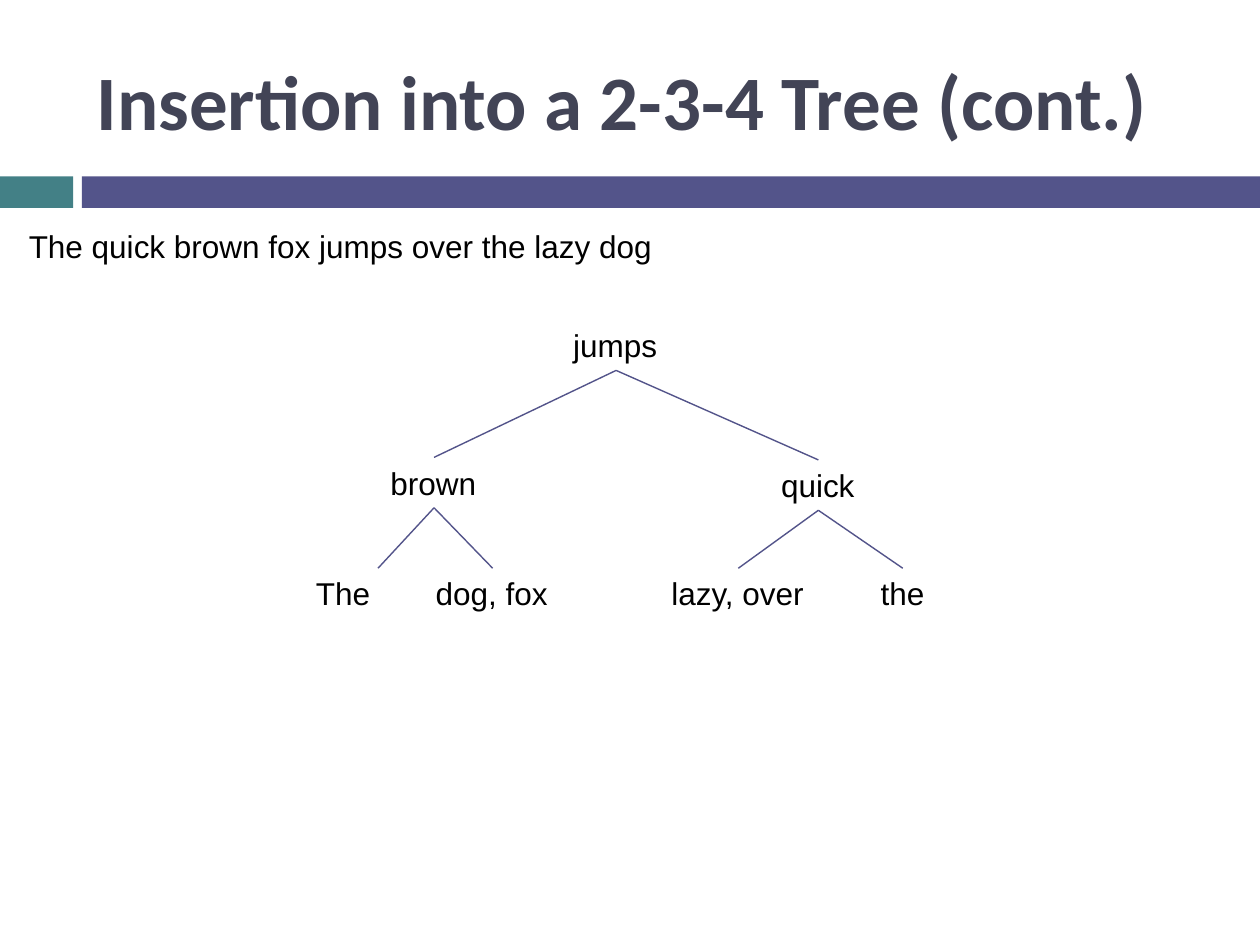
"""Build a slide showing a 2-3-4 tree after inserting the words of a sentence."""
from typing import NamedTuple, Optional

from lxml.etree import SubElement
from pptx import Presentation
from pptx.dml.color import RGBColor as Color
from pptx.enum.shapes import MSO_CONNECTOR as Connector, MSO_SHAPE as Preset
from pptx.enum.text import MSO_ANCHOR as Anchor, MSO_AUTO_SIZE as AutoSize
from pptx.oxml.ns import qn
from pptx.shapes.autoshape import Shape
from pptx.slide import Slide
from pptx.util import Inches, Pt


class Theme(NamedTuple):
    teal: Color = Color.from_string("438086")
    indigo: Color = Color.from_string("53548A")
    heading: Color = Color.from_string("424456")
    ink: Color = Color.from_string("000000")
    title_font: str = "Calibri"
    body_font: str = "Arial"
    title_size: float = 44
    body_size: float = 18
    edge_width: float = 0.79


class Band(NamedTuple):
    left: float
    width: float
    color: Color


class Node(NamedTuple):
    text: str
    left: float
    top: float
    width: float
    parent: Optional[str] = None
    edge_end: Optional[float] = None


THEME = Theme()
TOP, BOTTOM = 0, 2
LABEL_HEIGHT = 0.4
LEAF_TOP = 4.51
BANDS = [Band(0, 0.58, THEME.teal), Band(0.65, 9.35, THEME.indigo)]
SENTENCE = Node("The quick brown fox jumps over the lazy dog", 0.13, 1.75, 5.19)
TREE = [
    Node("jumps", 4.45, 2.54, 0.88),
    Node("brown", 3, 3.63, 0.89, "jumps"),
    Node("quick", 6.1, 3.65, 0.79, "jumps"),
    Node("The", 2.41, LEAF_TOP, 0.64, "brown", edge_end=3),
    Node("dog, fox", 3.36, LEAF_TOP, 1.1, "brown"),
    Node("lazy, over", 5.23, LEAF_TOP, 1.26, "quick"),
    Node("the", 6.89, LEAF_TOP, 0.55, "quick"),
]


def draw_band(page: Slide, band: Band) -> None:
    bar = page.shapes.add_shape(
        Preset.RECTANGLE, Inches(band.left), Inches(1.4), Inches(band.width), Inches(0.25)
    )
    bar.shadow.inherit = False
    bar.fill.solid()
    bar.fill.fore_color.rgb = band.color
    bar.line.fill.background()


def draw_title(page: Slide, text: str) -> None:
    box = page.shapes.add_textbox(Inches(0.67), Inches(0.25), Inches(8.92), Inches(1.08))
    frame = box.text_frame
    frame.text = text
    frame.word_wrap = True
    frame.vertical_anchor = Anchor.MIDDLE
    font = frame.paragraphs[0].runs[0].font
    font.name, font.size, font.bold = THEME.title_font, Pt(THEME.title_size), True
    font.color.rgb = THEME.heading


def draw_label(page: Slide, node: Node) -> Shape:
    box = page.shapes.add_textbox(
        Inches(node.left), Inches(node.top), Inches(node.width), Inches(LABEL_HEIGHT)
    )
    frame = box.text_frame
    frame.text = node.text
    frame.word_wrap = False
    frame.auto_size = AutoSize.SHAPE_TO_FIT_TEXT
    font = frame.paragraphs[0].runs[0].font
    font.name, font.size = THEME.body_font, Pt(THEME.body_size)
    font.color.rgb = THEME.ink
    return box


def draw_edge(page: Slide, parent: Shape, child: Shape, end: Optional[float]) -> None:
    end_x = child.left + child.width // 2 if end is None else Inches(end)
    edge = page.shapes.add_connector(
        Connector.STRAIGHT,
        parent.left + parent.width // 2,
        parent.top + parent.height,
        end_x,
        child.top,
    )
    edge.begin_connect(parent, BOTTOM)
    if end is None:
        edge.end_connect(child, TOP)
    edge.line.color.rgb = THEME.indigo
    edge.line.width = Pt(THEME.edge_width)
    SubElement(edge._element.spPr, qn("a:effectLst"))


def main() -> None:
    deck = Presentation()
    deck.slide_width, deck.slide_height = Inches(10), Inches(7.5)
    page = deck.slides.add_slide(deck.slide_layouts[6])
    for band in BANDS:
        draw_band(page, band)
    draw_title(page, "Insertion into a 2-3-4 Tree (cont.)")
    draw_label(page, SENTENCE)
    labels = {node.text: draw_label(page, node) for node in TREE}
    for node in TREE:
        if node.parent:
            draw_edge(page, labels[node.parent], labels[node.text], node.edge_end)
    deck.save("out.pptx")


if __name__ == "__main__":
    main()
